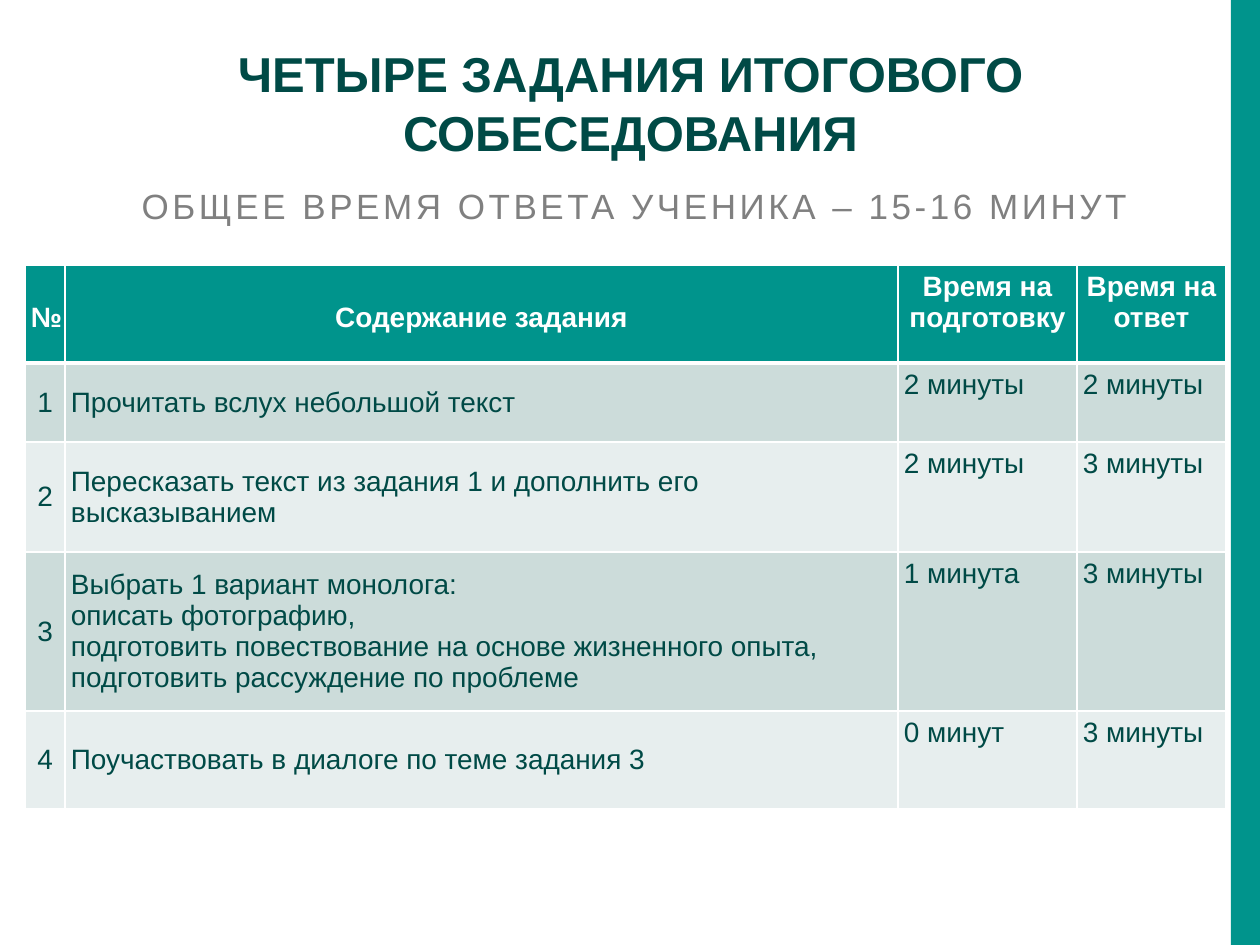
from lxml import etree
from pptx import Presentation
from pptx.dml.color import RGBColor
from pptx.enum.shapes import MSO_SHAPE
from pptx.enum.text import MSO_ANCHOR, PP_ALIGN
from pptx.oxml.ns import qn
from pptx.util import Pt

RECTANGLE = MSO_SHAPE.RECTANGLE
TOP, MIDDLE = MSO_ANCHOR.TOP, MSO_ANCHOR.MIDDLE
LEFT, CENTER = PP_ALIGN.LEFT, PP_ALIGN.CENTER

# Content
TITLE = "ЧЕТЫРЕ ЗАДАНИЯ ИТОГОВОГО СОБЕСЕДОВАНИЯ"
SUBTITLE = "ОБЩЕЕ ВРЕМЯ ОТВЕТА УЧЕНИКА – 15-16 МИНУТ"
HEADER = ("№", "Содержание задания", "Время на подготовку", "Время на ответ")
TASKS = [
    ("1", "Прочитать вслух небольшой текст", "2 минуты", "2 минуты"),
    ("2", "Пересказать текст из задания 1 и дополнить его высказыванием",
     "2 минуты", "3 минуты"),
    ("3", "Выбрать 1 вариант монолога:\n"
          "описать фотографию,\n"
          "подготовить повествование на основе жизненного опыта,\n"
          "подготовить рассуждение по проблеме",
     "1 минута", "3 минуты"),
    ("4", "Поучаствовать в диалоге по теме задания 3", "0 минут", "3 минуты"),
]

# Style and layout, in px
FONT = "Arial"
COLORS = {
    "teal": "00948C", "dark": "004A46", "gray": "808080", "white": "FFFFFF",
    "odd": "CCDCDA", "even": "E7EEEE",
}
PX_PER_INCH = 126
SLIDE_W, SLIDE_H = 1260, 945
STRIPE_W = 29
TITLE_BOX = (25, 37, 1211, 131)
SUBTITLE_BOX = (34, 183, 1201, 59)
TABLE_LEFT, TABLE_TOP = 25, 265
COLUMN_WIDTHS = (40, 833, 179, 149)
ROW_HEIGHTS = (98, 79, 110, 159, 98)
CELL_INSET = 6
GRID_LINE, HEADER_LINE = Pt(1), Pt(3)


def px(length):
    return round(length * 914400 / PX_PER_INCH)


def color(name):
    return RGBColor.from_string(COLORS[name])


def format_text(frame, size, color_name, bold=False, align=LEFT, spacing=None):
    for paragraph in frame.paragraphs:
        paragraph.alignment = align
        if spacing:
            paragraph.line_spacing = spacing
        for run in paragraph.runs:
            run.font.name = FONT
            run.font.size = Pt(size)
            run.font.bold = bold
            run.font.color.rgb = color(color_name)


def add_heading(slide, box, text, *style, **options):
    frame = slide.shapes.add_textbox(*map(px, box)).text_frame
    frame.word_wrap = True
    frame.text = text
    format_text(frame, *style, align=CENTER, **options)
    return frame


def set_borders(cell, top, bottom):
    properties = cell._tc.get_or_add_tcPr()
    widths = {"lnL": GRID_LINE, "lnR": GRID_LINE, "lnT": top, "lnB": bottom}
    for position, (side, width) in enumerate(widths.items()):
        line = etree.Element(qn(f"a:{side}"), w=str(int(width)))
        fill = etree.SubElement(line, qn("a:solidFill"))
        etree.SubElement(fill, qn("a:srgbClr"), val=COLORS["white"])
        properties.insert(position, line)


def fill_cell(cell, text, row, column):
    is_header = row == 0
    cell.margin_left = cell.margin_right = px(CELL_INSET)
    cell.margin_top = cell.margin_bottom = px(CELL_INSET)
    cell.text_frame.text = text
    if is_header:
        background = "teal"
        format_text(cell.text_frame, 16, "white", True, CENTER,
                    2.0 if column < 2 else None)
    else:
        background = "odd" if row % 2 else "even"
        format_text(cell.text_frame, 16, "dark",
                    align=LEFT if column else CENTER)
    cell.vertical_anchor = TOP if is_header or column > 1 else MIDDLE
    cell.fill.solid()
    cell.fill.fore_color.rgb = color(background)
    set_borders(cell, HEADER_LINE if row == 1 else GRID_LINE,
                HEADER_LINE if is_header else GRID_LINE)


def main():
    presentation = Presentation()
    presentation.slide_width = px(SLIDE_W)
    presentation.slide_height = px(SLIDE_H)
    slide = presentation.slides.add_slide(presentation.slide_layouts[6])

    # Stripe along the right edge
    stripe = slide.shapes.add_shape(
        RECTANGLE, px(SLIDE_W - STRIPE_W), 0, px(STRIPE_W), px(SLIDE_H))
    stripe.shadow.inherit = False
    stripe.fill.solid()
    stripe.fill.fore_color.rgb = color("teal")
    stripe.line.fill.background()

    # Subtitle with wide letter spacing
    subtitle = add_heading(slide, SUBTITLE_BOX, SUBTITLE, 20, "gray", spacing=0.9)
    subtitle.paragraphs[0].runs[0].font._element.set("spc", "200")

    # Task table
    rows = [HEADER, *TASKS]
    table = slide.shapes.add_table(
        len(rows), len(HEADER), px(TABLE_LEFT), px(TABLE_TOP),
        px(sum(COLUMN_WIDTHS)), px(sum(ROW_HEIGHTS))).table
    for column, width in zip(table.columns, COLUMN_WIDTHS):
        column.width = px(width)
    for row, height in zip(table.rows, ROW_HEIGHTS):
        row.height = px(height)
    for r, texts in enumerate(rows):
        for c, text in enumerate(texts):
            fill_cell(table.cell(r, c), text, r, c)

    # Title
    add_heading(slide, TITLE_BOX, TITLE, 28, "dark", bold=True)

    presentation.save("out.pptx")


if __name__ == "__main__":
    main()
